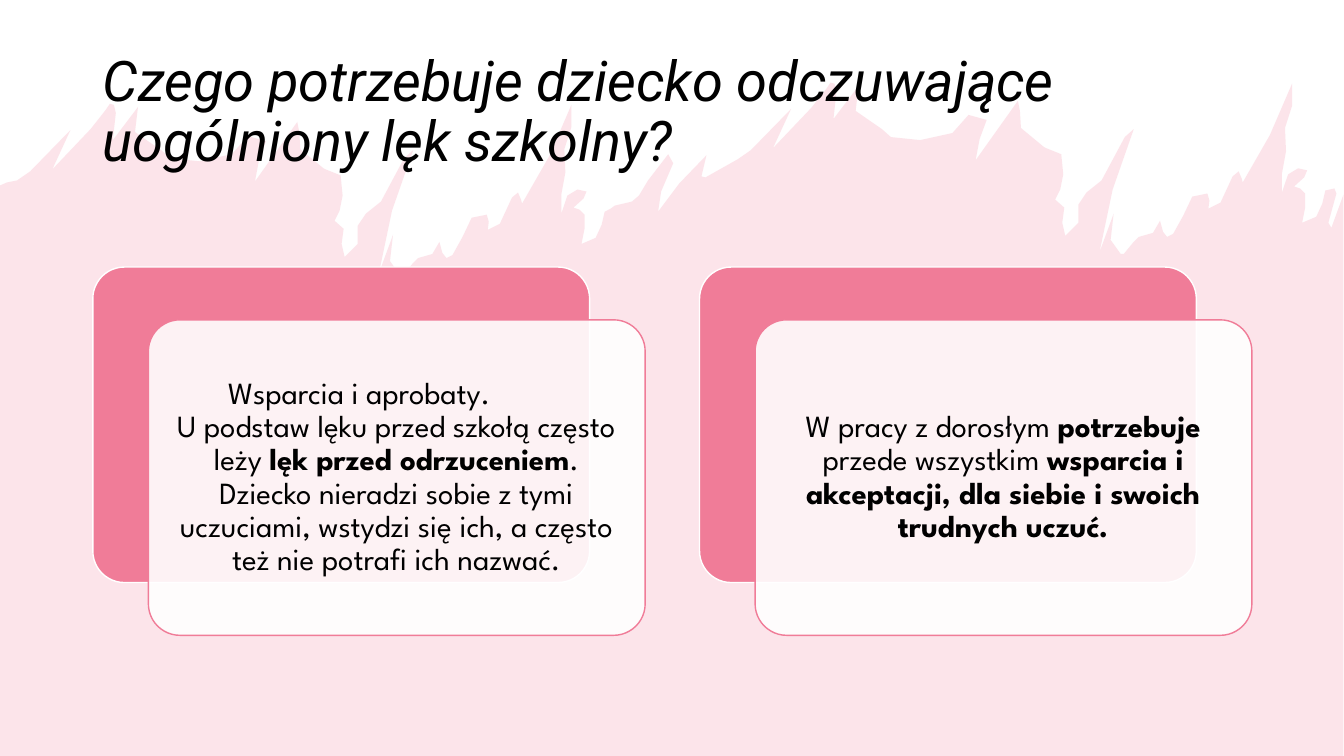
"""Builds the slide on what a child with generalised school anxiety needs."""
from dataclasses import dataclass
from typing import NamedTuple

from lxml import etree
from pptx import Presentation
from pptx import util as u
from pptx.dml.color import RGBColor
from pptx.enum import shapes, text
from pptx.oxml import ns


@dataclass(frozen=True)
class Theme:
    pink: str = "F07C98"
    white: str = "FFFFFF"
    ink: str = "000000"
    title_font: str = "Roboto"
    body_font: str = "League Spartan"
    title_size: int = 40
    body_size: int = 22


class Run(NamedTuple):
    words: str
    bold: bool = False


class Para(NamedTuple):
    runs: list[Run]
    indent: float | None = None


class Card(NamedTuple):
    left: float
    paras: list[Para]


Point = tuple[int, int]
THEME = Theme()
UNIT = u.Cm(0.0254)
SHIFT_X, SHIFT_Y = 715, -21
CARD_TOP, CARD_W, CARD_H = 6.73, 12.52, 7.95

LEAD_IN: list[Point] = [(30, 170), (70, 129), (52, 168), (90, 128), (105, 109)]
DRIPS: list[Point] = [
    (109, 103), (113, 104), (115, 112), (112, 139), (125, 122), (137, 106), (134, 131),
    (144, 138), (160, 149), (169, 157), (198, 160), (230, 153), (246, 135), (264, 140),
    (257, 159), (253, 180), (295, 121), (297, 131), (298, 148), (321, 167), (323, 168),
    (338, 174), (340, 194), (337, 209), (332, 219), (341, 227), (339, 242), (342, 255),
    (355, 242), (355, 224), (363, 212), (378, 200), (401, 157), (410, 149), (389, 209),
    (376, 271), (390, 233), (387, 259), (397, 273), (400, 273), (409, 262), (415, 256),
    (429, 252), (436, 240), (439, 251), (443, 256), (449, 253), (459, 235), (468, 216),
    (483, 213), (485, 220), (484, 228), (496, 222), (508, 196), (514, 191), (517, 198),
    (518, 202), (545, 155), (567, 104), (567, 126), (560, 148), (561, 171), (557, 193),
    (557, 212), (563, 194), (573, 188), (582, 190), (579, 197), (569, 206), (575, 208),
    (580, 213), (580, 227), (577, 242), (591, 236), (597, 223), (600, 210),
]
BRIDGE: list[Point] = [
    (606, 207), (610, 204), (627, 200), (634, 194), (643, 179), (663, 153), (668, 162),
    (656, 190), (653, 210), (674, 182), (701, 154), (696, 175), (700, 176), (732, 158),
]
RIGHT_EDGE: list[Point] = [
    (1324, 187), (1326, 192), (1318, 221), (1321, 226), (1333, 193), (1333, 750),
]

CARDS = [
    Card(2.34, [
        Para([Run("Wsparcia i aprobaty.")], indent=1.53),
        Para([
            Run("U podstaw lęku przed szkołą często leży "),
            Run("lęk przed odrzuceniem", True),
            Run(". Dziecko nieradzi sobie z tymi uczuciami, wstydzi się ich, "
                "a często też nie potrafi ich nazwać."),
        ]),
    ]),
    Card(17.63, [
        Para([
            Run("W pracy z dorosłym "),
            Run("potrzebuje ", True),
            Run("przede wszystkim "),
            Run("wsparcia i akceptacji, dla siebie i swoich trudnych uczuć.", True),
        ]),
    ]),
]


def paint(sp, fill: str, opacity: int = 100, line: str | None = None) -> None:
    """Set fill, opacity and outline of a shape."""
    sp.shadow.inherit = False
    sp.fill.solid()
    sp.fill.fore_color.rgb = RGBColor.from_string(fill)
    if opacity < 100:
        clr = sp.fill._xPr.find(".//" + ns.qn("a:srgbClr"))
        etree.SubElement(clr, ns.qn("a:alpha"), val=str(opacity * 1000))
    if line:
        sp.line.color.rgb = RGBColor.from_string(line)
        sp.line.width = u.Pt(1)
    else:
        sp.line.fill.background()


def add_text(slide, box: tuple[float, ...], paras: list[Para], *, font: str, size: int,
             align=text.PP_ALIGN.LEFT, italic: bool = False) -> None:
    """Add a text box with formatted paragraphs, anchored in the middle."""
    tf = slide.shapes.add_textbox(*map(u.Cm, box)).text_frame
    tf.word_wrap = True
    tf.vertical_anchor = text.MSO_ANCHOR.MIDDLE
    for i, para in enumerate(paras):
        p = tf.add_paragraph() if i else tf.paragraphs[0]
        p.line_spacing = 0.9
        p.space_before = p.space_after = u.Pt(0)
        p.alignment = align
        if para.indent is not None:
            p.alignment = text.PP_ALIGN.LEFT
            p._p.get_or_add_pPr().set("marL", str(u.Cm(para.indent)))
        for run in para.runs:
            r = p.add_run()
            r.text = run.words
            r.font.name, r.font.size = font, u.Pt(size)
            r.font.bold, r.font.italic = run.bold, italic
            r.font.color.rgb = RGBColor.from_string(THEME.ink)


def add_paint_edge(slide) -> None:
    """Draw the dripping pink area, whose outline repeats once to the right."""
    motif = LEAD_IN + DRIPS
    repeat = [(x + SHIFT_X, y + SHIFT_Y) for x, y in motif]
    outline = [(0, 184), (7, 181), (17, 179), *motif, *BRIDGE, *repeat, *RIGHT_EDGE]
    builder = slide.shapes.build_freeform(0, 750, scale=UNIT)
    builder.add_line_segments(outline, close=True)
    paint(builder.convert_to_shape(), THEME.pink, opacity=20)


def add_panel(slide, left: float, top: float, fill: str, line: str, opacity: int = 100) -> None:
    """Add one rounded panel of a card."""
    sp = slide.shapes.add_shape(shapes.MSO_SHAPE.ROUNDED_RECTANGLE,
                                *map(u.Cm, (left, top, CARD_W, CARD_H)))
    sp.adjustments[0] = 0.1
    paint(sp, fill, opacity, line)


def add_card(slide, card: Card) -> None:
    """Add a pink panel, a white panel in front of it and the text."""
    add_panel(slide, card.left, CARD_TOP, THEME.pink, THEME.white)
    add_panel(slide, card.left + 1.4, CARD_TOP + 1.33, THEME.white, THEME.pink, opacity=90)
    add_text(slide, (card.left + 1.63, CARD_TOP + 1.56, 12.04, 7.49), card.paras,
             font=THEME.body_font, size=THEME.body_size, align=text.PP_ALIGN.CENTER)


def main() -> None:
    """Build and save the slide."""
    prs = Presentation()
    prs.slide_width, prs.slide_height = u.Cm(33.87), u.Cm(19.05)
    slide = prs.slides.add_slide(prs.slide_layouts[6])
    add_paint_edge(slide)
    title = "Czego potrzebuje dziecko odczuwające uogólniony lęk szkolny?"
    add_text(slide, (2.34, 1.02, 29.21, 3.68), [Para([Run(title)])],
             font=THEME.title_font, size=THEME.title_size, italic=True)
    for card in CARDS:
        add_card(slide, card)
    prs.save("out.pptx")


if __name__ == "__main__":
    main()
